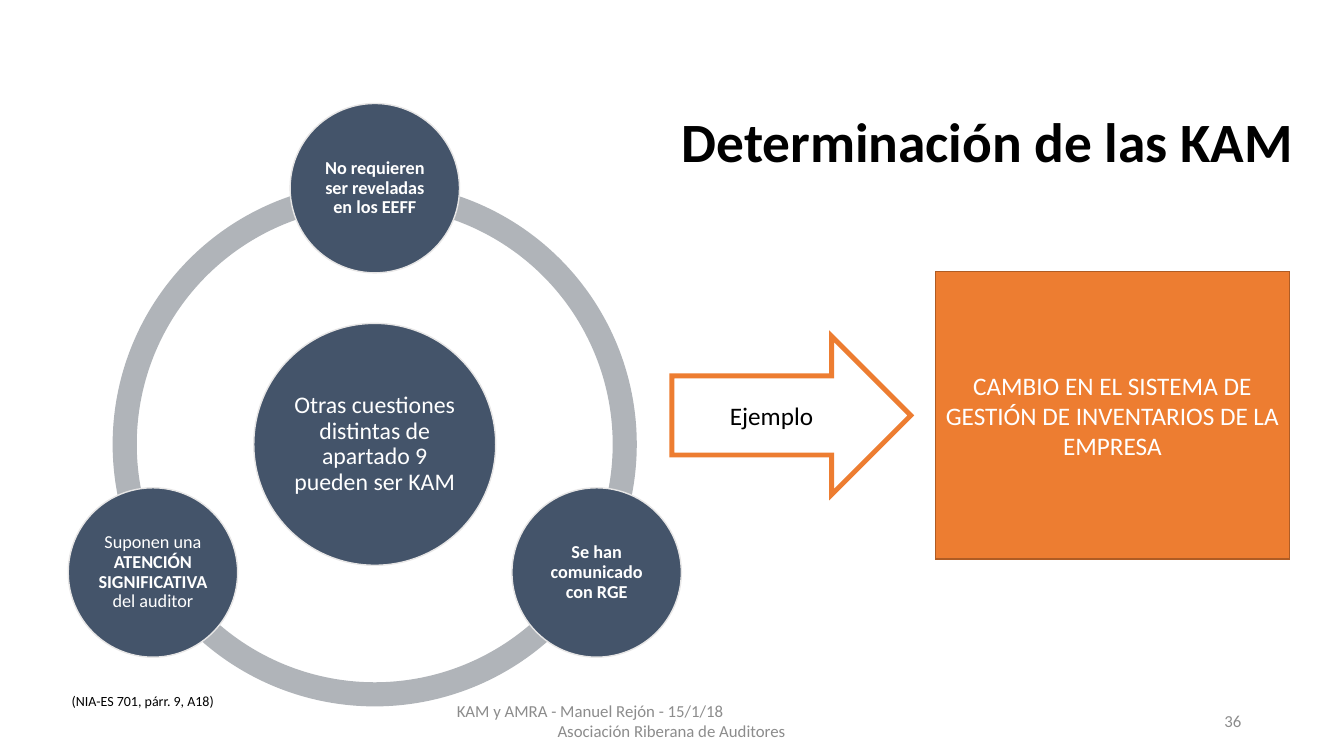
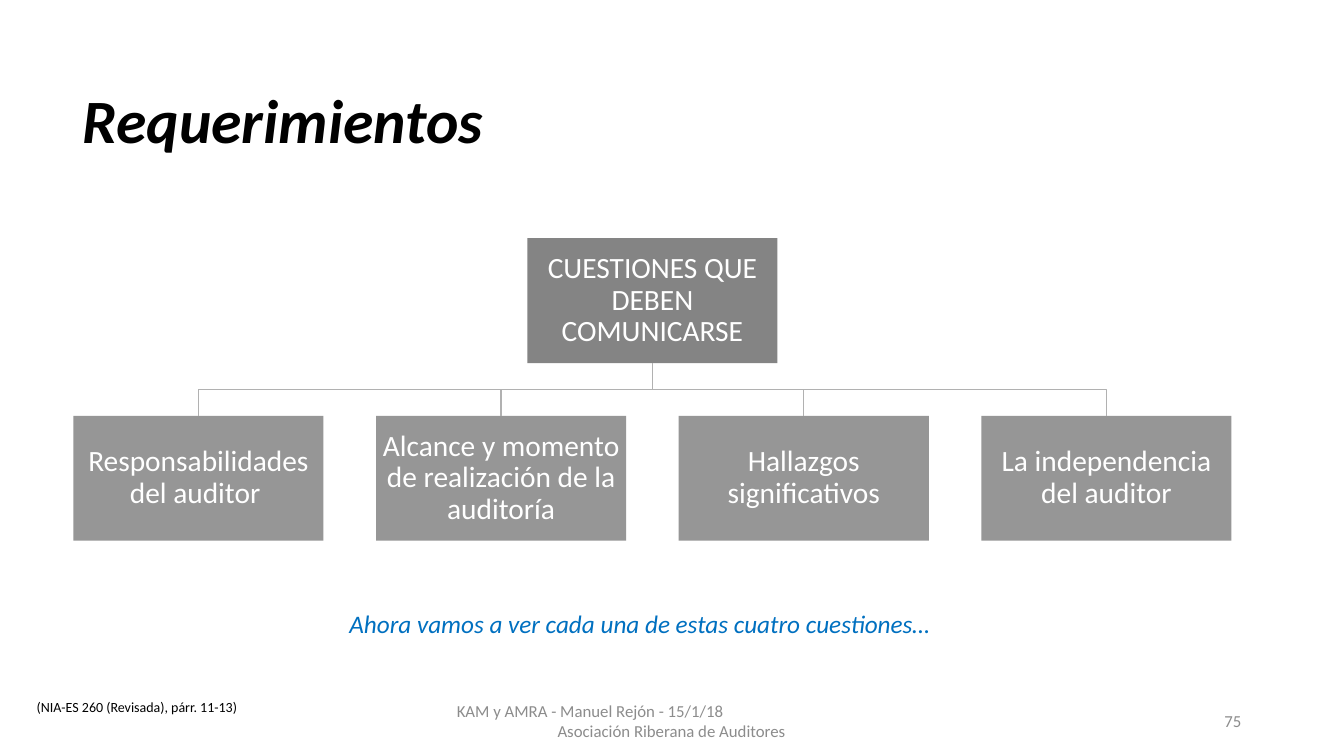
from math import cos, radians, sin

from lxml.etree import SubElement
from pptx import Presentation
from pptx.dml.color import RGBColor
from pptx.enum.shapes import MSO_CONNECTOR, MSO_SHAPE
from pptx.enum.text import MSO_ANCHOR, MSO_AUTO_SIZE, PP_ALIGN
from pptx.oxml.ns import qn
from pptx.util import Pt

FONT = "Calibri"
BLACK = RGBColor(0x00, 0x00, 0x00)
WHITE = RGBColor(0xFF, 0xFF, 0xFF)
NAVY = RGBColor(0x44, 0x54, 0x6A)
PALE = RGBColor(0xE7, 0xE6, 0xE6)
RING = RGBColor(0xB0, 0xB4, 0xB9)
ORANGE = RGBColor(0xED, 0x7D, 0x31)
RUST = RGBColor(0xAF, 0x5C, 0x24)
ROOT_GRAY = RGBColor(0x84, 0x84, 0x84)
BRANCH_GRAY = RGBColor(0x96, 0x96, 0x96)
LINK_GRAY = RGBColor(0xB1, 0xB1, 0xB1)
FOOTER_GRAY = RGBColor(0x8C, 0x8C, 0x8C)
BLUE = RGBColor(0x00, 0x70, 0xC0)

TITLE_ONLY = 5
DEGREE = 0.6
FOOTER_TOP, FOOTER_HEIGHT = 500.4, 28.8
FOOTER_LINES = [("KAM y AMRA - Manuel Rejón - 15/1/18", 0),
                ("Asociación Riberana de Auditores", 72)]


def box(left, top, width, height):
    """Convert a frame given in points to lengths."""
    return Pt(left), Pt(top), Pt(width), Pt(height)


def add_run(paragraph, text, size, color, bold=False, italic=False):
    """Append one formatted run to a paragraph."""
    run = paragraph.add_run()
    run.text = text
    font = run.font
    font.name, font.size, font.bold, font.italic = FONT, Pt(size), bold, italic
    font.color.rgb = color


def set_frame(frame, anchor, inset=None):
    """Wrap a text frame, anchor it and set equal insets if given."""
    frame.word_wrap = True
    frame.auto_size = MSO_AUTO_SIZE.NONE
    frame.vertical_anchor = anchor
    if inset is not None:
        frame.margin_left = frame.margin_right = Pt(inset)
        frame.margin_top = frame.margin_bottom = Pt(inset)


def add_title(slide, text, place, size, align, italic=False):
    """Place and format the title placeholder."""
    title = slide.shapes.title
    title.left, title.top, title.width, title.height = box(*place)
    set_frame(title.text_frame, MSO_ANCHOR.BOTTOM)
    paragraph = title.text_frame.paragraphs[0]
    paragraph.alignment = align
    paragraph.line_spacing = 0.9
    add_run(paragraph, text, size, BLACK, bold=True, italic=italic)


def add_label(slide, text, place, size, color, align=PP_ALIGN.LEFT,
              anchor=MSO_ANCHOR.TOP, italic=False):
    """Add a one-paragraph text box."""
    frame = slide.shapes.add_textbox(*box(*place)).text_frame
    set_frame(frame, anchor)
    frame.paragraphs[0].alignment = align
    add_run(frame.paragraphs[0], text, size, color, italic=italic)


def add_footer(slide, number):
    """Add the talk's two-line footer and the page number."""
    place = box(319.2, FOOTER_TOP, 324, FOOTER_HEIGHT)
    frame = slide.shapes.add_textbox(*place).text_frame
    set_frame(frame, MSO_ANCHOR.MIDDLE)
    for index, (text, indent) in enumerate(FOOTER_LINES):
        paragraph = frame.add_paragraph() if index else frame.paragraphs[0]
        paragraph.alignment = PP_ALIGN.LEFT
        paragraph._p.get_or_add_pPr().set("marL", str(Pt(indent)))
        add_run(paragraph, text, 12, FOOTER_GRAY)
    add_label(slide, number, (677.9, FOOTER_TOP, 216, FOOTER_HEIGHT), 12,
              FOOTER_GRAY, PP_ALIGN.RIGHT, MSO_ANCHOR.MIDDLE)


def add_figure(slide, kind, place, fill, line=None, weight=1):
    """Add a flat preset shape, outlined only if a line colour is given."""
    figure = slide.shapes.add_shape(kind, *box(*place))
    figure.shadow.inherit = False
    figure.fill.solid()
    figure.fill.fore_color.rgb = fill
    if line is None:
        figure.line.fill.background()
    else:
        figure.line.color.rgb = line
        figure.line.width = Pt(weight)
        outline = figure.element.spPr.find(qn("a:ln"))
        SubElement(outline, qn("a:miter"), lim="800000")
    return figure


def fill_figure(figure, runs, size, color=WHITE, inset=None, spacing=0.9):
    """Write centred (text, bold) runs into a shape."""
    set_frame(figure.text_frame, MSO_ANCHOR.MIDDLE, inset)
    paragraph = figure.text_frame.paragraphs[0]
    paragraph.alignment = PP_ALIGN.CENTER
    paragraph.line_spacing = spacing
    for text, bold in runs:
        add_run(paragraph, text, size, color, bold=bold)


def add_circle(slide, center_x, center_y, diameter, runs, size):
    """Add a navy circle with text around a centre point."""
    place = (center_x - diameter / 2, center_y - diameter / 2, diameter, diameter)
    circle = add_figure(slide, MSO_SHAPE.OVAL, place, NAVY, PALE)
    fill_figure(circle, runs, size, inset=1.5)


def add_cycle(slide, center_x, center_y, core, satellites):
    """Add a ring of arcs with a core circle and evenly spaced satellites."""
    ring, orbit = 374.4, 183
    step = 360 / len(satellites)
    angles = [(270 + step * index) % 360 for index in range(len(satellites))]
    ring_place = (center_x - ring / 2, center_y - ring / 2, ring, ring)
    for angle in angles:
        arc = add_figure(slide, MSO_SHAPE.BLOCK_ARC, ring_place, RING)
        arc.adjustments[0] = angle * DEGREE
        arc.adjustments[1] = (angle + step) % 360 * DEGREE
        arc.adjustments[2] = 0.046
    add_circle(slide, center_x, center_y, 172.8, core, 17)
    for angle, runs in zip(angles, satellites):
        add_circle(slide, center_x + orbit * cos(radians(angle)),
                   center_y + orbit * sin(radians(angle)), 121, runs, 13)


def add_branch_link(slide, root, branch):
    """Join a root's bottom to a branch's top, bending halfway down."""
    link = slide.shapes.add_connector(MSO_CONNECTOR.ELBOW, 0, 0, 0, 0)
    link.begin_connect(root, 2)
    link.end_connect(branch, 0)
    link.line.color.rgb = LINK_GRAY
    link.line.width = Pt(1)
    SubElement(link.element.spPr, qn("a:effectLst"))
    start_x, end_x = (node.left + node.width // 2 for node in (root, branch))
    start_y, end_y = root.top + root.height, branch.top
    run, drop = abs(end_x - start_x), end_y - start_y
    link.left = (start_x + end_x - drop) // 2
    link.top = (start_y + end_y - run) // 2
    link.width, link.height = drop, run
    rightward = end_x > start_x
    frame = link.element.spPr.find(qn("a:xfrm"))
    frame.set("rot", "16200000" if rightward else "5400000")
    frame.set("flipH", "1" if rightward else "0")
    frame.set("flipV", "0")


def add_tree(slide, root_text, branch_texts):
    """Add a root box joined to a row of branch boxes."""
    left, pitch, width, height = 52.4, 216.2, 178.7, 89.3
    root_top, branch_top = 170.1, 297
    middle = left + pitch * (len(branch_texts) - 1) / 2

    def add_node(node_left, top, fill, text):
        """Add one box of the tree."""
        node = add_figure(slide, MSO_SHAPE.RECTANGLE,
                          (node_left, top, width, height), fill)
        fill_figure(node, [(text, False)], 21, inset=1)
        return node

    root = add_node(middle, root_top, ROOT_GRAY, root_text)
    for index, text in enumerate(branch_texts):
        branch = add_node(left + pitch * index, branch_top, BRANCH_GRAY, text)
        add_branch_link(slide, root, branch)


def build_kam_slide(slide):
    """Build the slide on determining the KAM."""
    add_title(slide, "Determinación de las KAM", (460.8, 56.2, 488.9, 72),
              39.6, PP_ALIGN.CENTER)
    add_footer(slide, "36")
    add_label(slide, "(NIA-ES 701, párr. 9, A18)", (44.1, 491, 194.4, 19.4),
              10, BLACK)
    add_cycle(slide, 267.7, 317.4,
              [("Otras cuestiones distintas de apartado 9 pueden ser KAM", False)],
              [[("No requieren ser reveladas en los EEFF", True)],
               [("Se han comunicado con RGE", True)],
               [("Suponen una ", False), ("ATENCIÓN SIGNIFICATIVA ", True),
                ("del auditor", False)]])
    arrow = add_figure(slide, MSO_SHAPE.RIGHT_ARROW, (480, 240.3, 170.6, 113),
                       WHITE, ORANGE, 3.5)
    fill_figure(arrow, [("Ejemplo", False)], 18, BLACK, spacing=1)
    example = add_figure(slide, MSO_SHAPE.RECTANGLE, (668.2, 194.1, 252.7, 205.2),
                         ORANGE, RUST)
    fill_figure(example, [("CAMBIO EN EL SISTEMA DE GESTIÓN DE INVENTARIOS "
                           "DE LA EMPRESA", False)], 18, spacing=1)


def build_requirements_slide(slide):
    """Build the slide on the matters to be communicated."""
    add_title(slide, "Requerimientos", (51.8, 11.5, 828, 104.4), 44,
              PP_ALIGN.LEFT, italic=True)
    add_tree(slide, "CUESTIONES QUE DEBEN COMUNICARSE",
             ["Responsabilidades del auditor ",
              "Alcance y momento de realización de la auditoría",
              "Hallazgos significativos",
              "La independencia del auditor"])
    add_footer(slide, "75")
    add_label(slide, "(NIA-ES 260 (Revisada), párr. 11-13)",
              (19.2, 495.4, 194.4, 19.4), 10, BLACK)
    add_label(slide, "Ahora vamos a ver cada una de estas cuatro cuestiones…",
              (103.2, 431, 707.8, 28.8), 18, BLUE, PP_ALIGN.CENTER, italic=True)


def main():
    """Build and save the presentation."""
    deck = Presentation()
    deck.slide_width, deck.slide_height = Pt(960), Pt(540)
    for build in (build_kam_slide, build_requirements_slide):
        build(deck.slides.add_slide(deck.slide_layouts[TITLE_ONLY]))
    deck.save("out.pptx")


if __name__ == "__main__":
    main()
